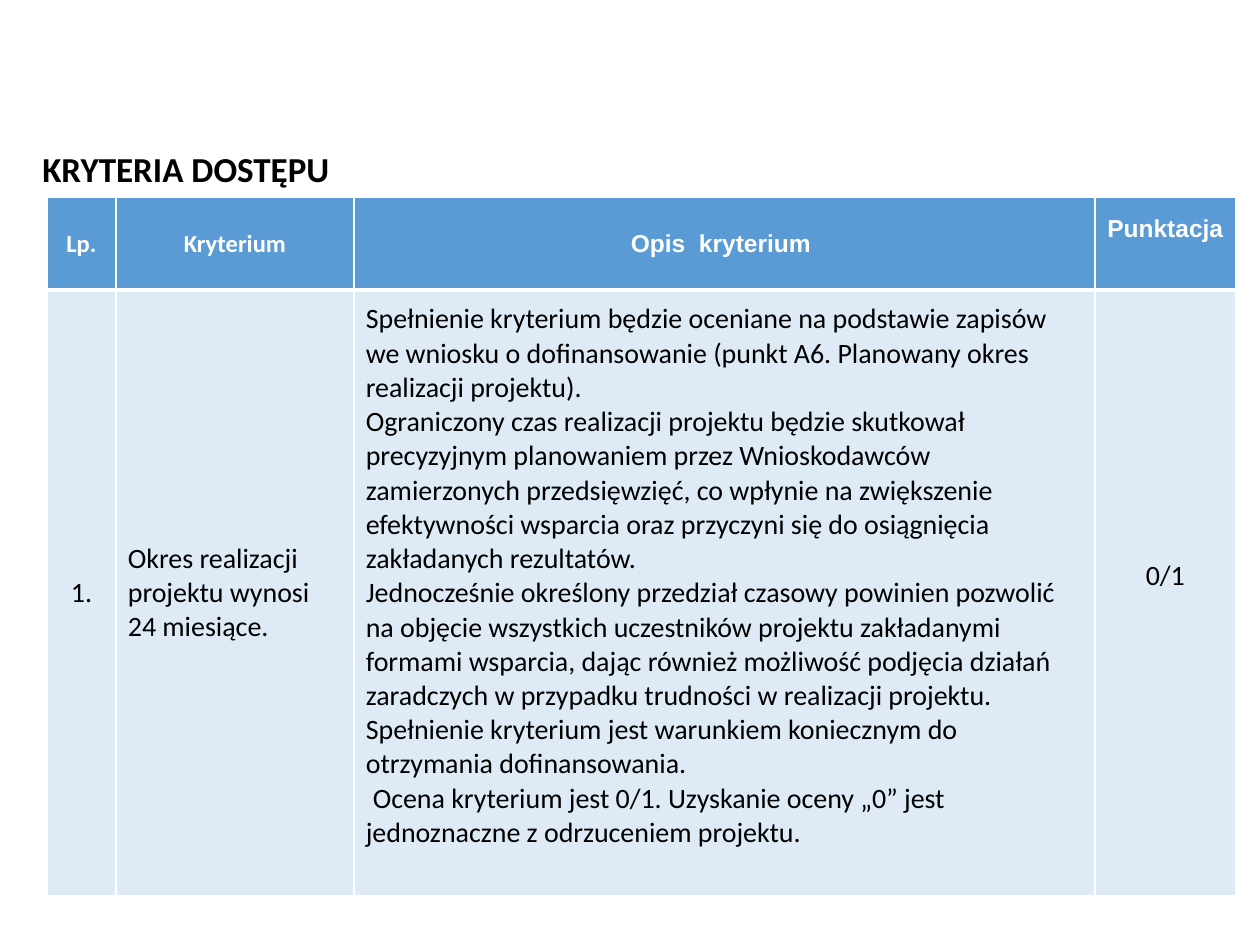
import dataclasses

import pptx
import pptx.dml.color
import pptx.enum.text
import pptx.util
from lxml import etree
from pptx.oxml.ns import qn

EMU_PER_PX = 914400 / 126
CENTER = pptx.enum.text.PP_ALIGN.CENTER
LEFT = pptx.enum.text.PP_ALIGN.LEFT
MIDDLE = pptx.enum.text.MSO_ANCHOR.MIDDLE


def px(value):
    return pptx.util.Emu(round(value * EMU_PER_PX))


def rgb(code):
    return pptx.dml.color.RGBColor.from_string(code)


@dataclasses.dataclass(frozen=True)
class Theme:
    header_fill: str = "5B9BD5"
    body_fill: str = "DEEBF7"
    light: str = "FFFFFF"
    dark: str = "000000"
    body_font: str = "Calibri"
    accent_font: str = "Arial"
    title_size: int = 20
    header_size: int = 14
    body_size: int = 16
    thin: int = 1
    thick: int = 3


@dataclasses.dataclass(frozen=True)
class Cell:
    """lift is the extra bottom margin; last_indent is the first-line indent of the last paragraph."""
    paragraphs: tuple
    align: object = CENTER
    font: str = Theme.body_font
    lift: int = 0
    last_indent: int = 0
    side_margin: int = 12


class SlideBuilder:
    def __init__(self, slide, theme):
        self.slide = slide
        self.theme = theme

    def style(self, paragraph, font, size, color, bold):
        paragraph.font.name = font
        paragraph.font.size = pptx.util.Pt(size)
        paragraph.font.bold = bold
        paragraph.font.color.rgb = rgb(color)

    def title(self, text, left, top, width, height):
        shape = self.slide.shapes.add_textbox(px(left), px(top), px(width), px(height))
        frame = shape.text_frame
        frame.word_wrap = True
        frame.vertical_anchor = MIDDLE
        frame.text = text
        theme = self.theme
        self.style(frame.paragraphs[0], theme.body_font, theme.title_size, theme.dark, True)

    def borders(self, cell, top, bottom):
        properties = cell._tc.get_or_add_tcPr()
        thin = self.theme.thin
        for side, width in (("L", thin), ("R", thin), ("T", top), ("B", bottom)):
            line = etree.SubElement(properties, qn(f"a:ln{side}"), w=str(pptx.util.Pt(width)))
            fill = etree.SubElement(line, qn("a:solidFill"))
            etree.SubElement(fill, qn("a:srgbClr"), val=self.theme.light)

    def cell(self, target, content, is_header):
        theme = self.theme
        if is_header:
            fill, color, size = theme.header_fill, theme.light, theme.header_size
            self.borders(target, theme.thin, theme.thick)
        else:
            fill, color, size = theme.body_fill, theme.dark, theme.body_size
            self.borders(target, theme.thick, theme.thin)
        target.fill.solid()
        target.fill.fore_color.rgb = rgb(fill)
        target.vertical_anchor = MIDDLE
        target.margin_left = target.margin_right = px(content.side_margin)
        target.margin_bottom = px(6 + content.lift)
        target.text_frame.text = "\n".join(content.paragraphs)
        paragraphs = target.text_frame.paragraphs
        if content.last_indent:
            paragraphs[-1]._p.get_or_add_pPr().set("indent", str(px(content.last_indent)))
        for paragraph in paragraphs:
            paragraph.alignment = content.align
            self.style(paragraph, content.font, size, color, is_header)

    def table(self, rows, left, top, widths, heights):
        shape = self.slide.shapes.add_table(
            len(heights), len(widths), px(left), px(top), px(sum(widths)), px(sum(heights)))
        table = shape.table
        for column, width in zip(table.columns, widths):
            column.width = px(width)
        for row_index, (row, height) in enumerate(zip(rows, heights)):
            table.rows[row_index].height = px(height)
            for column_index, content in enumerate(row):
                self.cell(table.cell(row_index, column_index), content, row_index == 0)


DESCRIPTION = (
    "Spełnienie kryterium będzie oceniane na podstawie zapisów we wniosku o "
    "dofinansowanie (punkt A6. Planowany okres realizacji projektu).",
    "Ograniczony czas realizacji projektu będzie skutkował precyzyjnym planowaniem "
    "przez Wnioskodawców zamierzonych przedsięwzięć, co wpłynie na zwiększenie "
    "efektywności wsparcia oraz przyczyni się do osiągnięcia zakładanych rezultatów.",
    "Jednocześnie określony przedział czasowy powinien pozwolić na objęcie wszystkich "
    "uczestników projektu zakładanymi formami wsparcia, dając również możliwość "
    "podjęcia działań zaradczych w przypadku trudności w realizacji projektu.",
    "Spełnienie kryterium jest warunkiem koniecznym do otrzymania dofinansowania.",
    "Ocena kryterium jest 0/1. Uzyskanie oceny „0” jest jednoznaczne z odrzuceniem "
    "projektu.",
)

CRITERIA = (
    (
        Cell(("Lp.",)),
        Cell(("Kryterium",)),
        Cell(("Opis  kryterium ",), font=Theme.accent_font),
        Cell(("Punktacja",), font=Theme.accent_font, lift=30, side_margin=6),
    ),
    (
        Cell(("1.",)),
        Cell(("Okres realizacji projektu wynosi 24 miesiące.",), align=LEFT),
        Cell(DESCRIPTION, align=LEFT, lift=34, last_indent=7),
        Cell(("0/1",), lift=34),
    ),
)


def main():
    presentation = pptx.Presentation()
    presentation.slide_width = px(1260)
    presentation.slide_height = px(945)
    slide = presentation.slides.add_slide(presentation.slide_layouts[6])
    builder = SlideBuilder(slide, Theme())
    builder.table(CRITERIA, 47, 197, widths=(69, 238, 741, 141), heights=(93, 606))
    builder.title("KRYTERIA DOSTĘPU", 30, 141, 466, 55)
    presentation.save("out.pptx")


if __name__ == "__main__":
    main()
